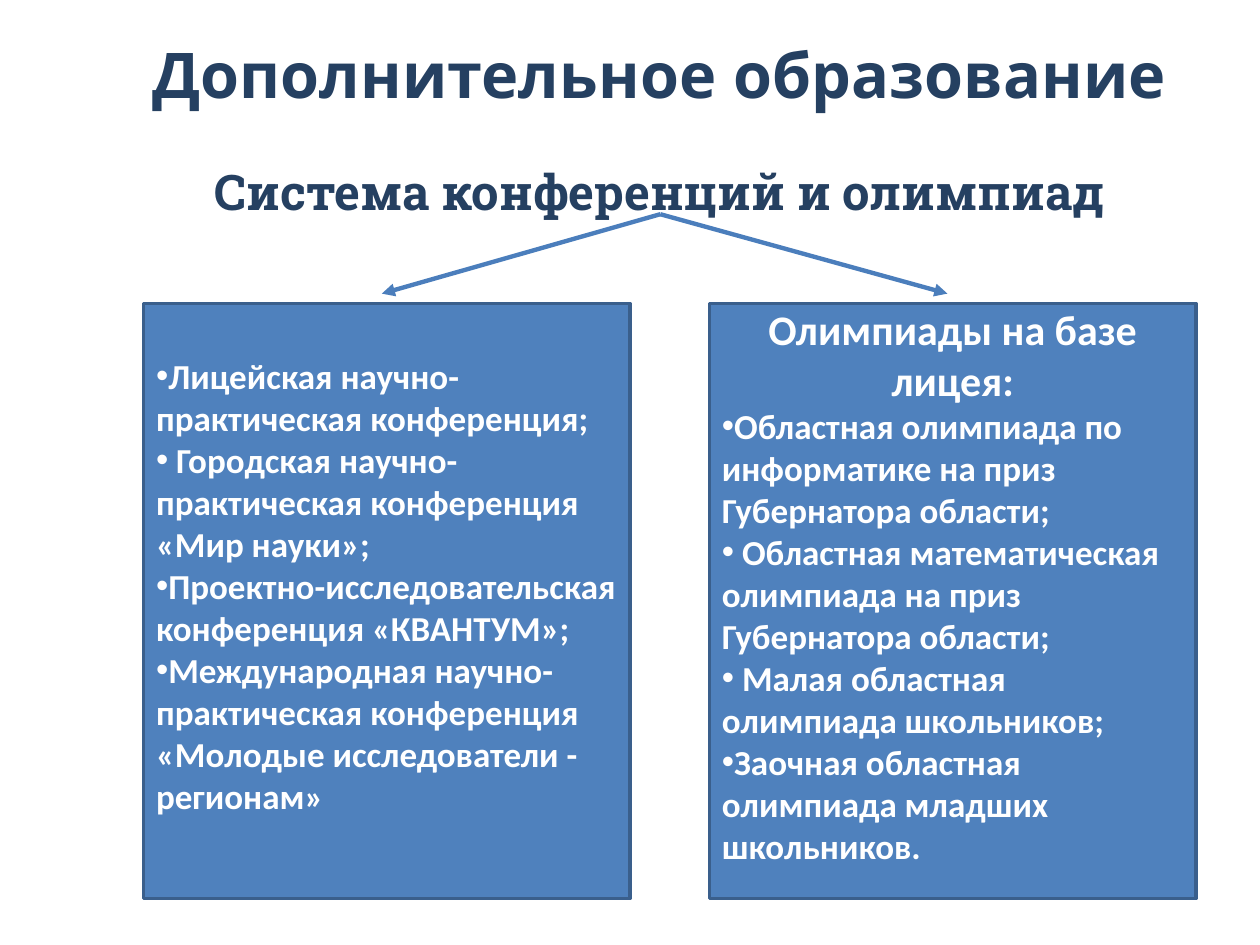
from dataclasses import dataclass

from lxml.etree import SubElement
from pptx import Presentation
from pptx.dml.color import RGBColor
from pptx.enum.shapes import MSO_CONNECTOR, MSO_SHAPE
from pptx.enum.text import MSO_ANCHOR, PP_ALIGN
from pptx.oxml.ns import qn
from pptx.slide import Slide
from pptx.text.text import TextFrame, _Paragraph
from pptx.util import Pt


@dataclass(frozen=True)
class TextStyle:
    face: str
    size: float
    color: str


@dataclass(frozen=True)
class Theme:
    title: TextStyle = TextStyle("Quicksand", 36, "254061")
    subtitle: TextStyle = TextStyle("Roboto Slab", 28, "254061")
    panel_heading: TextStyle = TextStyle("Calibri", 24, "FFFFFF")
    panel_item: TextStyle = TextStyle("Calibri", 20, "FFFFFF")
    panel_fill: str = "4F81BD"
    panel_border: str = "3A5F8C"
    arrow: str = "4B7EBC"
    panel_border_width: float = 2
    arrow_width: float = 2.5


@dataclass(frozen=True)
class Box:
    left: float
    top: float
    width: float
    height: float

    def lengths(self) -> tuple[Pt, ...]:
        return tuple(map(Pt, (self.left, self.top, self.width, self.height)))


@dataclass(frozen=True)
class Panel:
    left: float
    arrow_tip: float
    heading: str
    items: tuple[str, ...]


THEME = Theme()
TITLE_BOX = Box(56.2, 11.5, 641.5, 60.5)
SUBTITLE_BOX = Box(56.2, 88.6, 641.5, 393.8)
PANEL_TOP, PANEL_WIDTH, PANEL_HEIGHT = 173.5, 278, 340
ARROW_START = (377.3, 122.4)
ARROW_TIP_TOP = 167.8

PANELS = (
    Panel(82.1, 218.2, "", (
        "Лицейская научно-практическая конференция;",
        " Городская научно-практическая конференция «Мир науки»;",
        "Проектно-исследовательская конференция «КВАНТУМ»;",
        "Международная научно-практическая конференция "
        "«Молодые исследователи - регионам»",
    )),
    Panel(405.4, 541.4, "Олимпиады на базе лицея:", (
        "Областная олимпиада по информатике на приз Губернатора области;",
        " Областная математическая олимпиада на приз Губернатора области;",
        " Малая областная олимпиада школьников;",
        "Заочная областная олимпиада младших школьников.",
    )),
)


def set_format(target: object, values: dict[str, object]) -> None:
    for name, value in values.items():
        setattr(target, name, value)


def write(paragraph: _Paragraph, text: str, style: TextStyle,
          alignment: PP_ALIGN) -> None:
    run = paragraph.add_run()
    run.text = text
    paragraph.alignment = alignment
    set_format(run.font, {"name": style.face, "size": Pt(style.size), "bold": True})
    run.font.color.rgb = RGBColor.from_string(style.color)


def add_bullet(paragraph: _Paragraph) -> None:
    properties = paragraph._p.get_or_add_pPr()
    SubElement(properties, qn("a:buFont")).set("typeface", "Arial")
    SubElement(properties, qn("a:buChar")).set("char", "•")


def add_heading(slide: Slide, box: Box, text: str, style: TextStyle,
                anchor: MSO_ANCHOR) -> None:
    frame = slide.shapes.add_textbox(*box.lengths()).text_frame
    set_format(frame, {"word_wrap": True, "vertical_anchor": anchor})
    write(frame.paragraphs[0], text, style, PP_ALIGN.CENTER)


def add_arrow(slide: Slide, tip_left: float) -> None:
    points = map(Pt, (*ARROW_START, tip_left, ARROW_TIP_TOP))
    arrow = slide.shapes.add_connector(MSO_CONNECTOR.STRAIGHT, *points)
    arrow.line.color.rgb = RGBColor.from_string(THEME.arrow)
    arrow.line.width = Pt(THEME.arrow_width)
    SubElement(arrow.line._get_or_add_ln(), qn("a:tailEnd")).set("type", "triangle")
    SubElement(arrow._element.spPr, qn("a:effectLst"))


def fill_panel(frame: TextFrame, panel: Panel) -> None:
    set_format(frame, {
        "word_wrap": True,
        "vertical_anchor": MSO_ANCHOR.MIDDLE,
        "margin_top": Pt(0),
        "margin_bottom": Pt(18),
    })
    paragraph = frame.paragraphs[0]
    if panel.heading:
        write(paragraph, panel.heading, THEME.panel_heading, PP_ALIGN.CENTER)
        paragraph = frame.add_paragraph()
    for index, item in enumerate(panel.items):
        if index:
            paragraph = frame.add_paragraph()
        add_bullet(paragraph)
        write(paragraph, item, THEME.panel_item, PP_ALIGN.LEFT)


def add_panel(slide: Slide, panel: Panel) -> None:
    box = Box(panel.left, PANEL_TOP, PANEL_WIDTH, PANEL_HEIGHT)
    card = slide.shapes.add_shape(MSO_SHAPE.RECTANGLE, *box.lengths())
    card.shadow.inherit = False
    card.fill.solid()
    card.fill.fore_color.rgb = RGBColor.from_string(THEME.panel_fill)
    card.line.color.rgb = RGBColor.from_string(THEME.panel_border)
    card.line.width = Pt(THEME.panel_border_width)
    fill_panel(card.text_frame, panel)


def main() -> None:
    presentation = Presentation()
    set_format(presentation, {"slide_width": Pt(720), "slide_height": Pt(540)})
    slide = presentation.slides.add_slide(presentation.slide_layouts[6])
    add_heading(slide, TITLE_BOX, "Дополнительное образование",
                THEME.title, MSO_ANCHOR.MIDDLE)
    add_heading(slide, SUBTITLE_BOX, "Система конференций и олимпиад",
                THEME.subtitle, MSO_ANCHOR.TOP)
    for panel in PANELS:
        add_arrow(slide, panel.arrow_tip)
    for panel in PANELS:
        add_panel(slide, panel)
    presentation.save("out.pptx")


if __name__ == "__main__":
    main()
